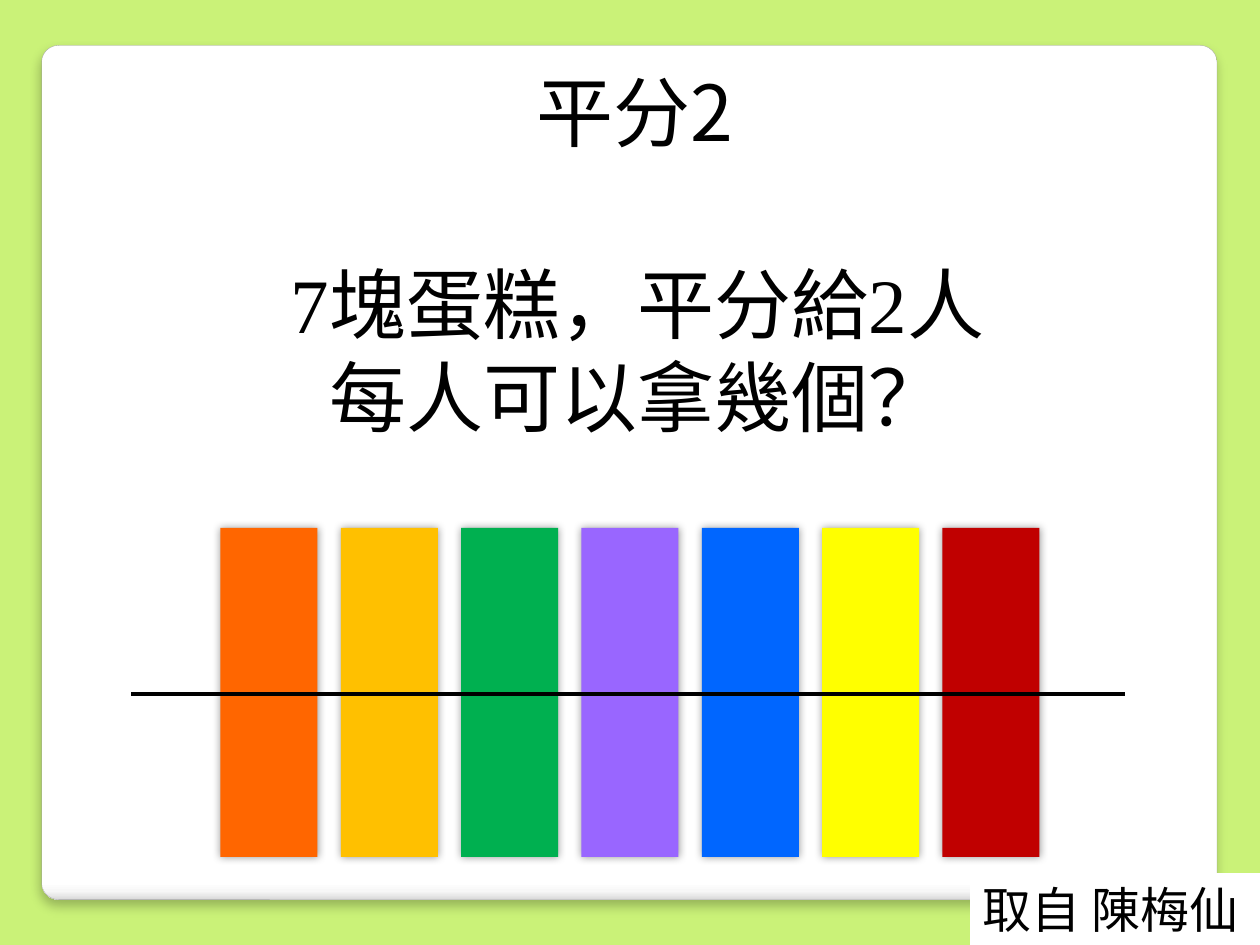
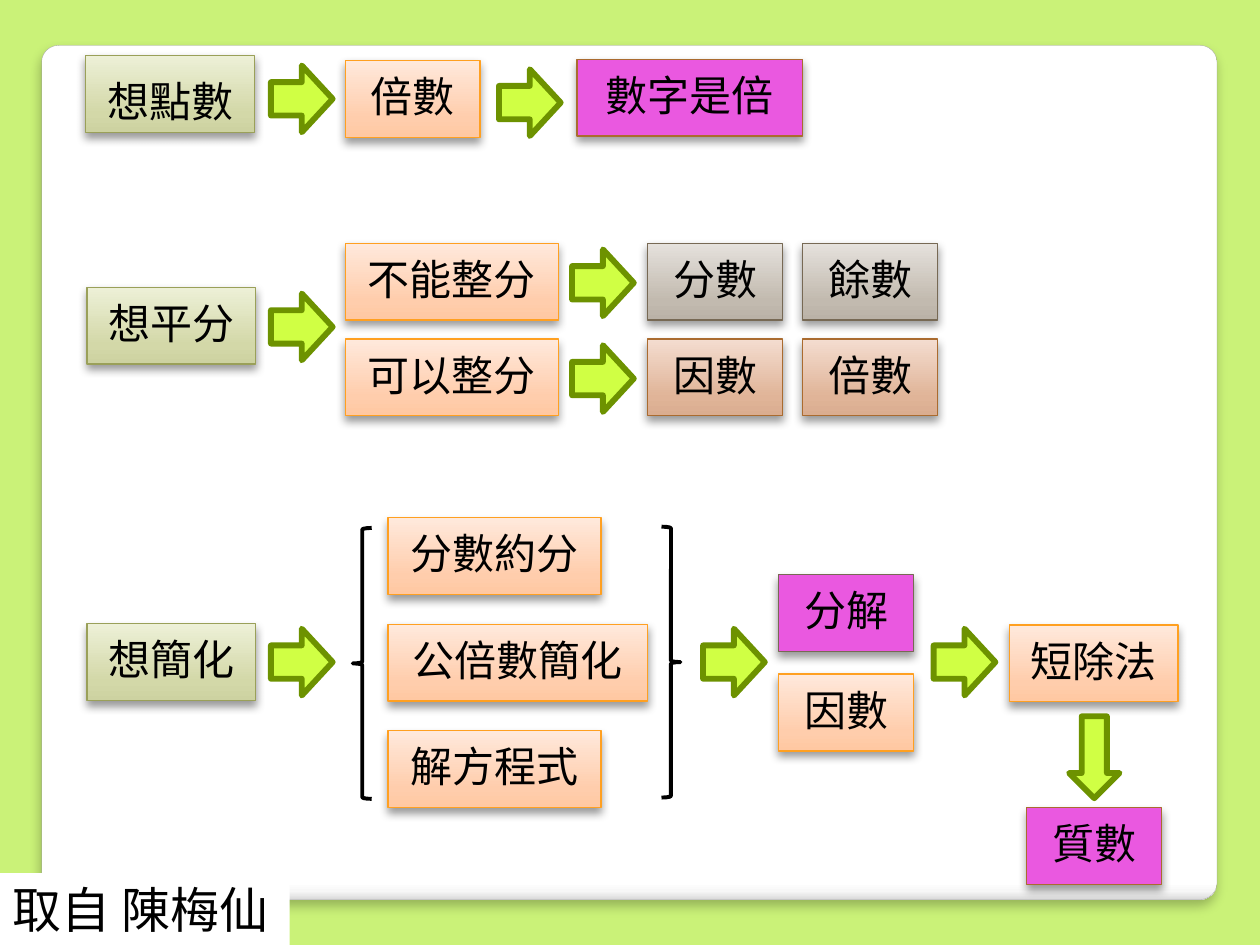
from dataclasses import dataclass

from lxml.etree import SubElement
from pptx import Presentation
from pptx.dml.color import RGBColor
from pptx.enum.shapes import MSO_CONNECTOR as Connector, MSO_SHAPE as Preset
from pptx.enum.text import MSO_ANCHOR as Anchor, MSO_AUTO_SIZE as AutoSize, PP_ALIGN as Align
from pptx.oxml.ns import qn
from pptx.util import Inches, Pt


@dataclass(frozen=True)
class Look:
    stops: tuple
    border: str
    angle: int = 270


@dataclass(frozen=True)
class Shadow:
    opacity: int
    blur: float
    distance: float
    angle: int = 90


@dataclass(frozen=True)
class Box:
    left: float
    top: float
    width: float
    height: float

    def inner(self, left, top, width, height):
        return Box(self.left + left, self.top + top, width, height)

    def lengths(self):
        return [Inches(value) for value in (self.left, self.top, self.width, self.height)]


class Theme:
    background = "CAF278"
    white = "FFFFFF"
    black = "000000"
    cakes = ("FF6600", "FFC000", "00B050", "9966FF", "0066FF", "FFFF00", "C00000")
    arrow_fill = "D0FF44"
    arrow_border = "6D9200"
    panel = Look(((0, "FFFFFF"), (98, "FFFFFF"), (99, "F7F7F7"), (100, "DADADA")), "A4A4A4", 90)
    green = Look(((0, "CDD2A1"), (25, "D3D8A8"), (100, "EDF0D7")), "9AA059")
    orange = Look(((0, "FFC8A2"), (25, "FFCDAC"), (100, "FFE9DC")), "FFA021")
    gray = Look(((0, "BAB2A7"), (25, "C2BAAF"), (100, "E5E1DC")), "776954")
    brown = Look(((0, "DAAD90"), (25, "E0B498"), (100, "F4DDD0")), "AA6B2F")
    pink = Look(((0, "EA58E0"),), "AA6B2F")
    pink_gray = Look(((0, "EA58E0"),), "776954")
    panel_shadow = Shadow(25, 6, 4)
    cake_shadow = Shadow(40, 5, 0, 0)
    label_shadow = Shadow(40, 5.2, 3)
    sans = "Noto Sans CJK SC"
    serif = "Times New Roman"
    credit_font = "DejaVu Sans"
    heading_size = 44
    label_size = 24
    credit_size = 28


LABEL_HEIGHT = 0.61
LABEL_WIDTHS = {2: 1.07, 3: 1.34, 4: 1.69, 5: 2.06}


def rgb(color):
    return RGBColor.from_string(color)


def paint_gradient(shape, look):
    shape.fill.gradient()
    gradient = shape.element.spPr.find(qn("a:gradFill"))
    stop_list = gradient.find(qn("a:gsLst"))
    for stop in list(stop_list):
        stop_list.remove(stop)
    for position, color in look.stops:
        stop = SubElement(stop_list, qn("a:gs"), pos=str(position * 1000))
        SubElement(stop, qn("a:srgbClr"), val=color)
    gradient.find(qn("a:lin")).set("ang", str(look.angle * 60000))


def cast_shadow(shape, shadow):
    effects = shape.element.spPr.find(qn("a:effectLst"))
    outer = SubElement(
        effects, qn("a:outerShdw"), blurRad=str(Pt(shadow.blur)),
        dist=str(Pt(shadow.distance)), dir=str(shadow.angle * 60000),
        algn="ctr", rotWithShape="0")
    color = SubElement(outer, qn("a:srgbClr"), val=Theme.black)
    SubElement(color, qn("a:alpha"), val=str(shadow.opacity * 1000))


def add_shape(slide, preset, box, fill=None, border=None, weight=0.75, shadow=None):
    shape = slide.shapes.add_shape(preset, *box.lengths())
    shape.shadow.inherit = False
    if isinstance(fill, Look) and len(fill.stops) > 1:
        paint_gradient(shape, fill)
    elif fill:
        shape.fill.solid()
        shape.fill.fore_color.rgb = rgb(fill.stops[0][1] if isinstance(fill, Look) else fill)
    else:
        shape.fill.background()
    if border:
        shape.line.color.rgb = rgb(border)
        shape.line.width = Pt(weight)
    else:
        shape.line.fill.background()
    if shadow:
        cast_shadow(shape, shadow)
    return shape


def write(shape, text, size, font, align=Align.CENTER, anchor=Anchor.TOP, spacing=None, wrap=True):
    frame = shape.text_frame
    frame.text = text
    frame.word_wrap = wrap
    frame.vertical_anchor = anchor
    for paragraph in frame.paragraphs:
        paragraph.alignment = align
        if spacing:
            paragraph.line_spacing = spacing
        for run in paragraph.runs:
            run.font.size = Pt(size)
            run.font.name = font
            run.font.color.rgb = rgb(Theme.black)


def add_heading(slide, box, text, font):
    heading = slide.shapes.add_textbox(*box.lengths())
    write(heading, text, Theme.heading_size, font)
    heading.text_frame.auto_size = AutoSize.SHAPE_TO_FIT_TEXT


def add_label(slide, region, left, top, text, look, width=None, anchor=Anchor.MIDDLE):
    box = region.inner(left, top, width or LABEL_WIDTHS[len(text)], LABEL_HEIGHT)
    label = add_shape(slide, Preset.RECTANGLE, box, look, look.border, shadow=Theme.label_shadow)
    write(label, text, Theme.label_size, Theme.sans, anchor=anchor, spacing=0.9)


def add_arrow(slide, region, left, top, width=0.49, height=0.53, rotation=0):
    arrow = add_shape(slide, Preset.RIGHT_ARROW, region.inner(left, top, width, height),
                      Theme.arrow_fill, Theme.arrow_border, 3.35)
    arrow.rotation = rotation


def add_brace(slide, region, preset, left, top):
    add_shape(slide, preset, region.inner(left, top, 0.15, 2.15), border=Theme.black, weight=2.25)


def start_slide(presentation):
    slide = presentation.slides.add_slide(presentation.slide_layouts[6])
    slide.background.fill.solid()
    slide.background.fill.fore_color.rgb = rgb(Theme.background)
    panel = add_shape(slide, Preset.ROUNDED_RECTANGLE, Box(0.33, 0.36, 9.33, 6.78),
                      Theme.panel, Theme.panel.border, 0.16, Theme.panel_shadow)
    panel.adjustments[0] = 0.02
    return slide


def add_credit(slide, left):
    credit = add_shape(slide, Preset.RECTANGLE, Box(left, 6.93, 2.3, 0.57), Theme.white)
    write(credit, "取自 陳梅仙", Theme.credit_size, Theme.credit_font, Align.LEFT, wrap=False)


def add_cakes(slide, region):
    cake_width = 0.77
    pitch = (region.width - cake_width) / (len(Theme.cakes) - 1)
    for index, color in enumerate(Theme.cakes):
        box = region.inner(index * pitch, 0, cake_width, region.height)
        add_shape(slide, Preset.RECTANGLE, box, color, shadow=Theme.cake_shadow)


def add_cut(slide, left, right, top):
    cut = slide.shapes.add_connector(
        Connector.STRAIGHT, Inches(left), Inches(top), Inches(right), Inches(top))
    cut.line.color.rgb = rgb(Theme.black)
    cut.line.width = Pt(2.25)
    SubElement(cut.element.spPr, qn("a:effectLst"))


def add_counting(slide, region):
    add_label(slide, region, 0, 0, "想點數", Theme.green, anchor=Anchor.BOTTOM)
    add_arrow(slide, region, 1.47, 0.08)
    add_label(slide, region, 2.06, 0.04, "倍數", Theme.orange)
    add_arrow(slide, region, 3.28, 0.11)
    add_label(slide, region, 3.9, 0.03, "數字是倍", Theme.pink, width=1.79)


def add_sharing(slide, region):
    add_label(slide, region, 0, 0.35, "想平分", Theme.green)
    add_arrow(slide, region, 1.46, 0.4)
    branches = (
        (0, "不能整分", ("分數", "餘數"), Theme.gray),
        (0.76, "可以整分", ("因數", "倍數"), Theme.brown),
    )
    for top, case, results, look in branches:
        add_label(slide, region, 2.05, top, case, Theme.orange)
        add_arrow(slide, region, 3.85, top + 0.05)
        for index, result in enumerate(results):
            add_label(slide, region, 4.45 + index * 1.23, top, result, look)


def add_simplifying(slide, region):
    add_label(slide, region, 0, 0.84, "想簡化", Theme.green)
    add_brace(slide, region, Preset.LEFT_BRACE, 2.11, 0.08)
    for index, method in enumerate(("分數約分", "公倍數簡化", "解方程式")):
        add_label(slide, region, 2.39, index * 0.845, method, Theme.orange)
    add_brace(slide, region, Preset.RIGHT_BRACE, 4.56, 0.07)
    for left in (1.46, 4.89, 6.72):
        add_arrow(slide, region, left, 0.88)
    add_label(slide, region, 5.49, 0.45, "分解", Theme.pink_gray)
    add_label(slide, region, 5.49, 1.24, "因數", Theme.orange)
    add_label(slide, region, 7.32, 0.85, "短除法", Theme.orange)
    add_arrow(slide, region, 7.67, 1.7, 0.65, 0.4, 90)
    add_label(slide, region, 7.46, 2.3, "質數", Theme.pink)


def build_cake_slide(presentation):
    slide = start_slide(presentation)
    add_cakes(slide, Box(1.75, 4.19, 6.5, 2.61))
    add_heading(slide, Box(1.34, 1.99, 7.44, 1.58),
                "7塊蛋糕，平分給2人\n每人可以拿幾個？", Theme.serif)
    add_heading(slide, Box(1.32, 0.46, 7.44, 0.84), "平分2", Theme.sans)
    add_cut(slide, 1.04, 8.93, 5.51)
    add_credit(slide, 7.7)


def build_thinking_slide(presentation):
    slide = start_slide(presentation)
    add_counting(slide, Box(0.68, 0.44, 5.69, 0.64))
    add_sharing(slide, Box(0.69, 1.93, 6.75, 1.37))
    add_simplifying(slide, Box(0.69, 4.11, 8.66, 2.91))
    add_credit(slide, 0)


def main():
    presentation = Presentation()
    presentation.slide_width = Inches(10)
    presentation.slide_height = Inches(7.5)
    build_cake_slide(presentation)
    build_thinking_slide(presentation)
    presentation.save("out.pptx")


if __name__ == "__main__":
    main()
